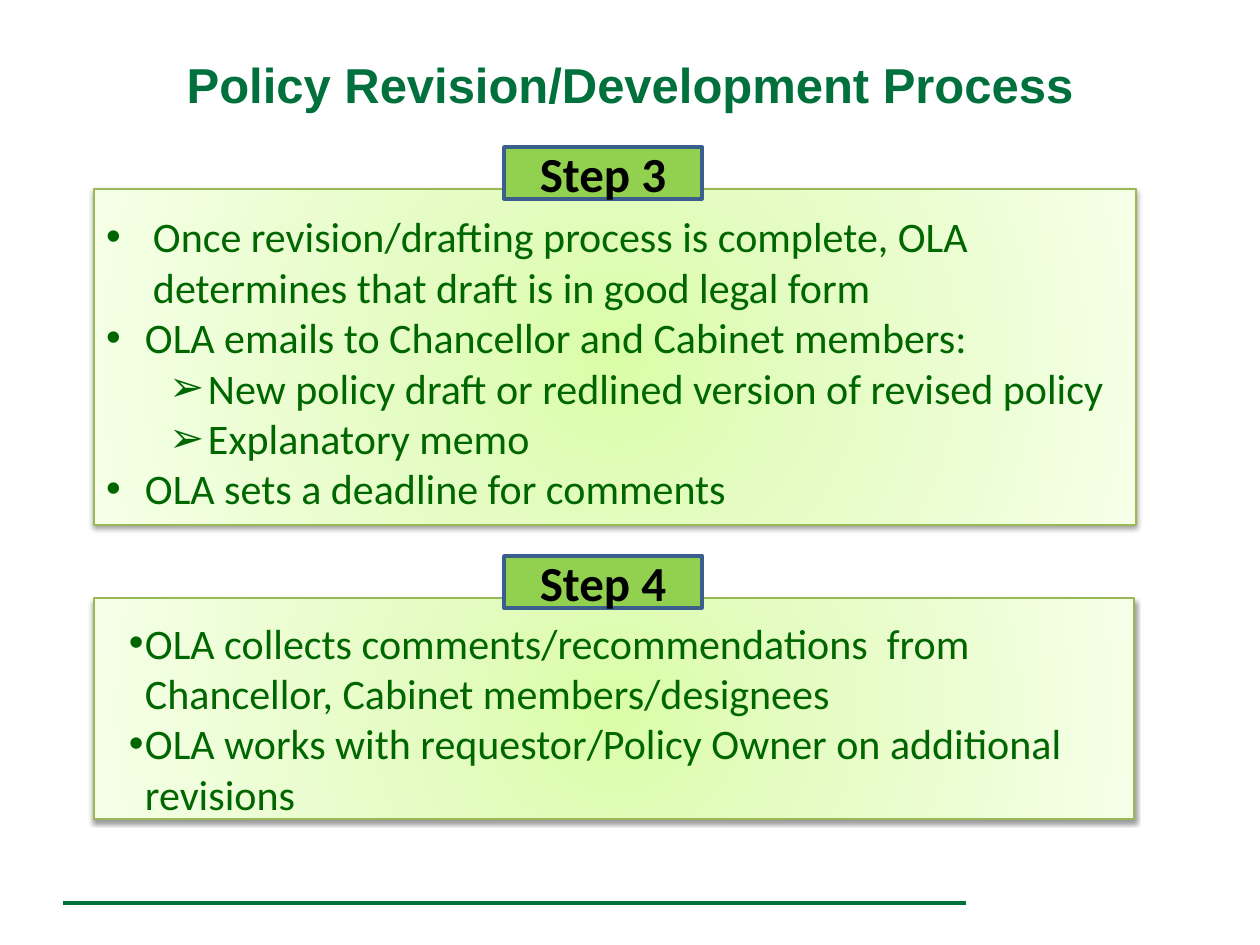
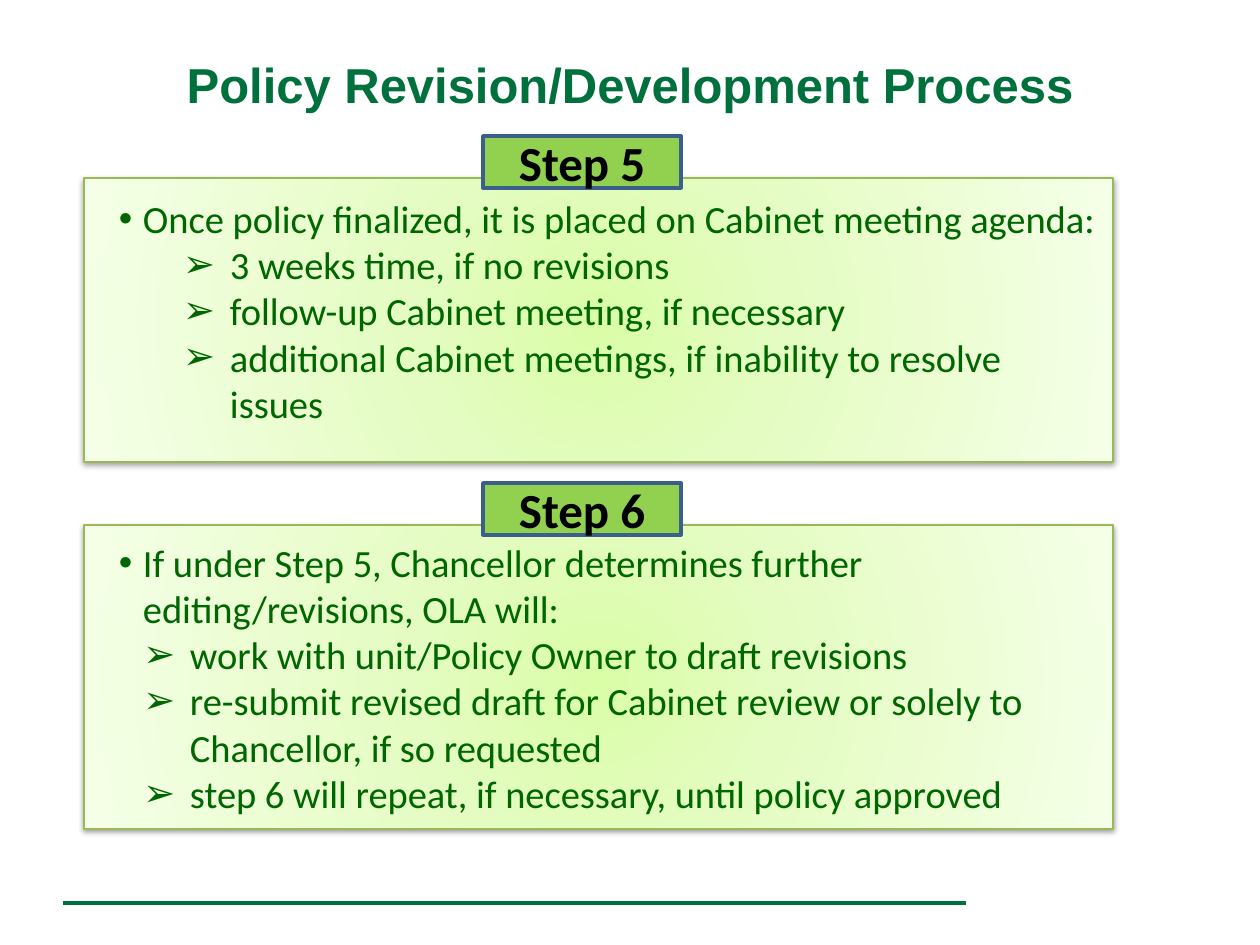
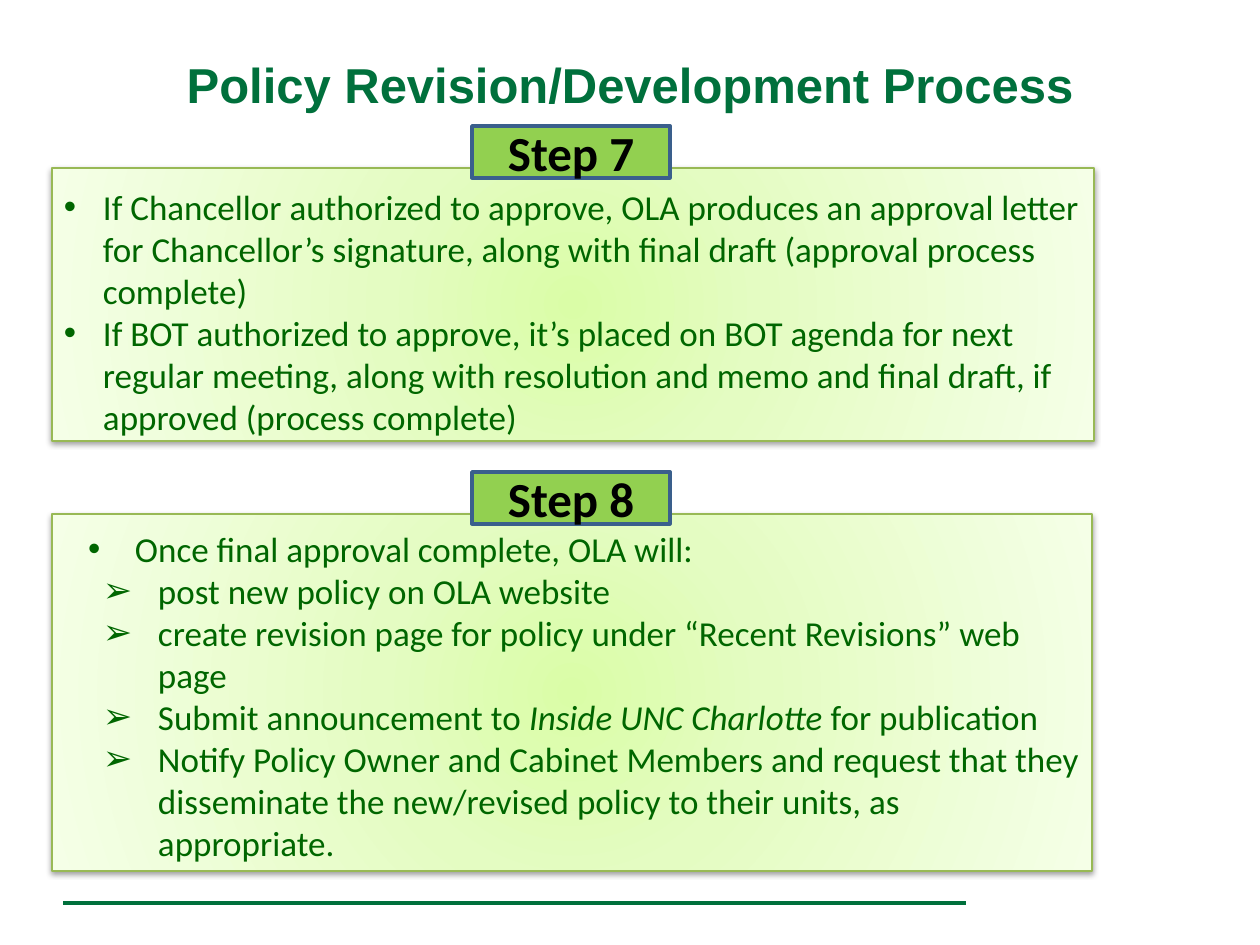
from pptx import Presentation
from pptx.dml.color import RGBColor
from pptx.enum.shapes import MSO_CONNECTOR, MSO_SHAPE
from pptx.enum.text import MSO_ANCHOR, PP_ALIGN
from pptx.oxml import parse_xml
from pptx.oxml.ns import nsdecls
from pptx.util import Pt

TITLE = "Policy Revision/Development Process"
GREEN, INK, BLACK = "00703C", "006600", "000000"
LIME, NAVY, EDGE = "92D050", "3A5F8C", "98B955"
GLOW = [(0, "DAFDA7"), (35, "E4FCC2"), (100, "F5FFE7")]
DOT, ARROW = "•", "➢"
PAD = 12
TAB_W, TAB_H, TAB_RISE = 198, 52, 42

# Panel: box (left, top, width, height), text inset from top, text size,
# and groups of (mark, indent, hang, lines); *stars* set italics.
SLIDES = [
    {"tab": 504, "panels": [
        {"name": "Step 3", "box": (94, 189, 1042, 336), "inset": 22, "size": 24, "groups": [
            (DOT, 47, 47, ["Once revision/drafting process is complete, OLA determines that draft is in good legal form"]),
            (DOT, 39, 39, ["OLA emails to Chancellor and Cabinet members:"]),
            (ARROW, 102, 39, ["New policy draft or redlined version of revised policy",
                              "Explanatory memo"]),
            (DOT, 39, 39, ["OLA sets a deadline for comments"])]},
        {"name": "Step 4", "box": (94, 598, 1040, 221), "inset": 19, "size": 24, "groups": [
            (DOT, 39, 16, ["OLA collects comments/recommendations  from Chancellor, Cabinet members/designees",
                           "OLA works with requestor/Policy Owner on additional revisions"])]},
    ]},
    {"tab": 483, "panels": [
        {"name": "Step 5", "box": (84, 178, 1029, 284), "inset": 17, "size": 22, "groups": [
            (DOT, 47, 24, ["Once policy finalized, it is placed on Cabinet meeting agenda:"]),
            (ARROW, 134, 47, ["3 weeks time, if no revisions",
                              "follow-up Cabinet meeting, if necessary",
                              "additional Cabinet meetings, if inability to resolve issues"])]},
        {"name": "Step 6", "box": (84, 525, 1029, 304), "inset": 14, "size": 22, "groups": [
            (DOT, 47, 24, ["If under Step 5, Chancellor determines further editing/revisions, OLA will:"]),
            (ARROW, 94, 47, ["work with unit/Policy Owner to draft revisions",
                             "re-submit revised draft for Cabinet review or solely to Chancellor, if so requested",
                             "step 6 will repeat, if necessary, until policy approved"])]},
    ]},
    {"tab": 472, "panels": [
        {"name": "Step 7", "box": (52, 168, 1042, 273), "inset": 17, "size": 20, "groups": [
            (DOT, 39, 39, ["If Chancellor authorized to approve, OLA produces an approval letter for Chancellor’s signature, along with final draft (approval process complete)",
                           "If BOT authorized to approve, it’s placed on BOT agenda for next regular meeting, along with resolution and memo and final draft, if approved (process complete)"])]},
        {"name": "Step 8", "box": (52, 514, 1040, 357), "inset": 13, "size": 20, "groups": [
            (DOT, 71, 47, ["Once final approval complete, OLA will:"]),
            (ARROW, 94, 55, ["post new policy on OLA website",
                             "create revision page for policy under “Recent Revisions” web page",
                             "Submit announcement to *Inside UNC Charlotte* for publication",
                             "Notify Policy Owner and Cabinet Members and request that they disseminate the new/revised policy to their units, as appropriate."])]},
    ]},
]


def px(n):
    return round(n * 914400 / 126)


def rgb(code):
    return RGBColor.from_string(code)


def xml(tag, attrs="", inner=""):
    return parse_xml(f"<a:{tag} {nsdecls('a')} {attrs}>{inner}</a:{tag}>")


def write(para, text, size=28, color=BLACK, font="Calibri", bold=False,
          align=PP_ALIGN.LEFT, mark=None, indent=0, hang=0):
    props = para._p.get_or_add_pPr()
    if mark:
        props.set("marL", str(px(indent)))
        props.set("indent", str(-px(hang)))
        props.append(xml("buFont", 'typeface="Arial"'))
        props.append(xml("buChar", f'char="{mark}"'))
    para.alignment = align
    for i, part in enumerate(text.split("*")):
        run = para.add_run()
        run.text = part
        face = run.font
        face.name, face.size, face.bold = font, Pt(size), bold
        face.italic = i % 2 == 1
        face.color.rgb = rgb(color)


def frame(shape, anchor, top=0):
    body = shape.text_frame
    body.word_wrap = True
    body.vertical_anchor = anchor
    body.margin_left = body.margin_right = px(PAD)
    body.margin_top, body.margin_bottom = px(top), 0
    return body


def rect(slide, box):
    return slide.shapes.add_shape(MSO_SHAPE.RECTANGLE, *map(px, box))


def edge(shape, color, width):
    shape.line.color.rgb = rgb(color)
    shape.line.width = Pt(width)


def glow(shape):
    """Fill from the centre outwards, with a soft shadow below."""
    stops = "".join(f'<a:gs pos="{pos * 1000}"><a:srgbClr val="{code}"/></a:gs>'
                    for pos, code in GLOW)
    mid = 'l="50000" t="50000" r="50000" b="50000"'
    props = shape._element.spPr
    props.append(xml("gradFill", 'rotWithShape="1"',
                     f'<a:gsLst>{stops}</a:gsLst>'
                     f'<a:path path="circle"><a:fillToRect {mid}/></a:path>'))
    edge(shape, EDGE, 0.75)
    props.append(xml("effectLst", "",
                     '<a:outerShdw blurRad="40000" dist="20000" dir="5400000" rotWithShape="0">'
                     f'<a:srgbClr val="{BLACK}"><a:alpha val="38000"/></a:srgbClr></a:outerShdw>'))


def add_panel(slide, panel, tab_x):
    box = rect(slide, panel["box"])
    glow(box)
    body = frame(box, MSO_ANCHOR.TOP, panel["inset"])
    items = [(mark, indent, hang, line)
             for mark, indent, hang, lines in panel["groups"] for line in lines]
    for i, (mark, indent, hang, line) in enumerate(items):
        para = body.add_paragraph() if i else body.paragraphs[0]
        write(para, line, size=panel["size"], color=INK,
              mark=mark, indent=indent, hang=hang)

    tab = rect(slide, (tab_x, panel["box"][1] - TAB_RISE, TAB_W, TAB_H))
    tab.shadow.inherit = False
    tab.fill.solid()
    tab.fill.fore_color.rgb = rgb(LIME)
    edge(tab, NAVY, 2)
    write(frame(tab, MSO_ANCHOR.MIDDLE).paragraphs[0], panel["name"],
          bold=True, align=PP_ALIGN.CENTER)


def add_base(slide):
    """Title and footer rule."""
    rule = slide.shapes.add_connector(MSO_CONNECTOR.STRAIGHT,
                                      px(63), px(903), px(966), px(903))
    edge(rule, GREEN, 2.5)
    rule._element.spPr.append(xml("effectLst"))
    title = slide.shapes.add_textbox(0, px(42), px(1260), px(84))
    write(frame(title, MSO_ANCHOR.MIDDLE).paragraphs[0], TITLE, color=GREEN,
          font="Arial", bold=True, align=PP_ALIGN.CENTER)


def main():
    deck = Presentation()
    deck.slide_width, deck.slide_height = px(1260), px(945)
    for page in SLIDES:
        slide = deck.slides.add_slide(deck.slide_layouts[6])
        add_base(slide)
        for panel in page["panels"]:
            add_panel(slide, panel, page["tab"])
    deck.save("out.pptx")


if __name__ == "__main__":
    main()
